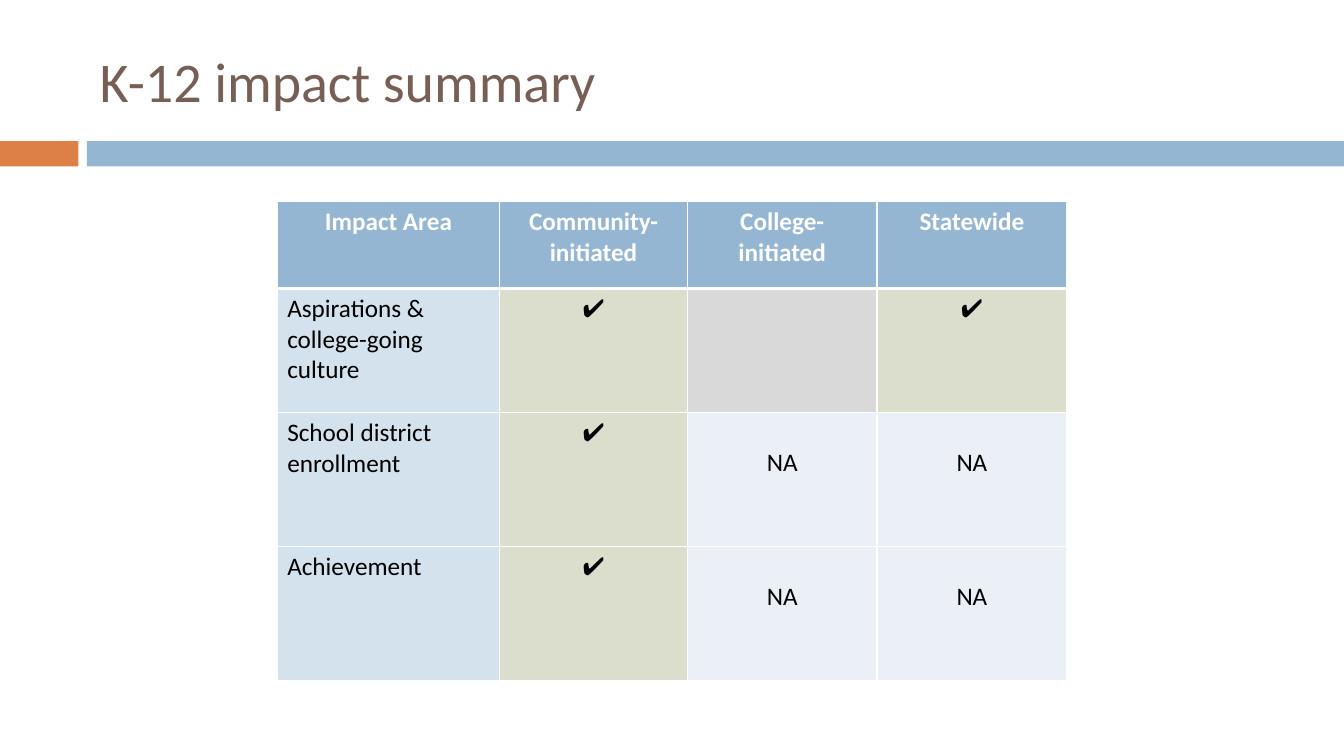
from lxml import etree
from pptx import Presentation
from pptx import util as u
from pptx.dml import color
from pptx.enum import shapes, text
from pptx.oxml import ns

COLORS = {
    "title": "775F55", "accent": "DD8047", "band": "94B6D2", "white": "FFFFFF",
    "black": "000000", "area": "D4E2ED", "yes": "DBDDCD", "none": "D9D9D9",
    "na": "EAF0F6",
}
CHECK = "✔"
NA = "NA"
LEFT, CENTER = text.PP_ALIGN.LEFT, text.PP_ALIGN.CENTER
SIDES = ("L", "R", "T", "B")


def rgb(name):
    return color.RGBColor.from_string(COLORS[name])


class SlideBuilder:
    """Holds the style and the current slide."""

    font_name = "Calibri"
    title_size = 40
    table_size = 18
    na_margin_top = 25.5  # drops NA to the second text line

    def __init__(self, page):
        self.page = page

    def place(self, item, left, top, width, height):
        frame = {"left": left, "top": top, "width": width, "height": height}
        for name, value in frame.items():
            setattr(item, name, u.Pt(value))

    def add_words(self, para, words, size, ink, bold=False, align=LEFT):
        para.alignment = align
        span = para.add_run()
        span.text = words
        style = {"name": self.font_name, "size": u.Pt(size), "bold": bold}
        for name, value in style.items():
            setattr(span.font, name, value)
        span.font.color.rgb = rgb(ink)

    def title(self, words, *frame):
        box = self.page.shapes.title
        self.place(box, *frame)
        box.text_frame.word_wrap = True
        box.text_frame.vertical_anchor = text.MSO_ANCHOR.MIDDLE
        self.add_words(box.text_frame.paragraphs[0], words, self.title_size, "title")

    def bar(self, fill, *frame):
        box = self.page.shapes.add_shape(
            shapes.MSO_SHAPE.RECTANGLE, *(u.Pt(value) for value in frame))
        box.shadow.inherit = False
        box.fill.solid()
        box.fill.fore_color.rgb = rgb(fill)
        box.line.fill.background()

    def borders(self, cell, widths):
        properties = cell._tc.get_or_add_tcPr()
        for index, side in enumerate(SIDES):
            line = etree.Element(ns.qn(f"a:ln{side}"), w=str(u.Pt(widths.get(side, 1))))
            fill = etree.SubElement(line, ns.qn("a:solidFill"))
            etree.SubElement(fill, ns.qn("a:srgbClr"), val=COLORS["white"])
            properties.insert(index, line)

    def cell(self, cell, words, fill, widths, ink="black", bold=False, align=CENTER):
        cell.fill.solid()
        cell.fill.fore_color.rgb = rgb(fill)
        self.borders(cell, widths)
        if words == NA:
            cell.margin_top = u.Pt(self.na_margin_top)
        if words:
            para = cell.text_frame.paragraphs[0]
            self.add_words(para, words, self.table_size, ink, bold, align)

    def table(self, rows, left, top, widths, heights):
        frame = (left, top, sum(widths), sum(heights))
        table = self.page.shapes.add_table(
            len(rows), len(widths), *(u.Pt(value) for value in frame)).table
        table.horz_banding = False
        for column, width in zip(table.columns, widths):
            column.width = u.Pt(width)
        for row, height in zip(table.rows, heights):
            row.height = u.Pt(height)

        fills = {CHECK: "yes", NA: "na", "": "none"}
        edges = {0: {"B": 3}, 1: {"T": 3}}  # heavy rule under the header
        for r, row in enumerate(rows):
            for c, words in enumerate(row):
                cell, lines = table.cell(r, c), edges.get(r, {})
                if r == 0:
                    self.cell(cell, words, "band", lines, "white", True)
                elif c == 0:
                    self.cell(cell, words, "area", lines, align=LEFT)
                else:
                    self.cell(cell, words, fills[words], lines)


def main():
    deck = Presentation()
    deck.slide_width, deck.slide_height = u.Pt(960), u.Pt(540)
    page = deck.slides.add_slide(deck.slide_layouts[5])
    builder = SlideBuilder(page)

    # Title and the two-colour band below it
    builder.title("K-12 impact summary", 64, 18, 856, 78)
    builder.bar("accent", 0, 100.8, 56, 18)
    builder.bar("band", 62, 100.8, 898, 18)

    # Impact by area and kind of initiative
    rows = [
        ("Impact Area", "Community- initiated", "College- initiated", "Statewide"),
        ("Aspirations & college-going culture", CHECK, "", CHECK),
        ("School district enrollment", CHECK, NA, NA),
        ("Achievement", CHECK, NA, NA),
    ]
    builder.table(rows, 198, 144, (159, 134, 135.5, 135.5), (62, 88.5, 95.75, 95.75))

    deck.save("out.pptx")


if __name__ == "__main__":
    main()
